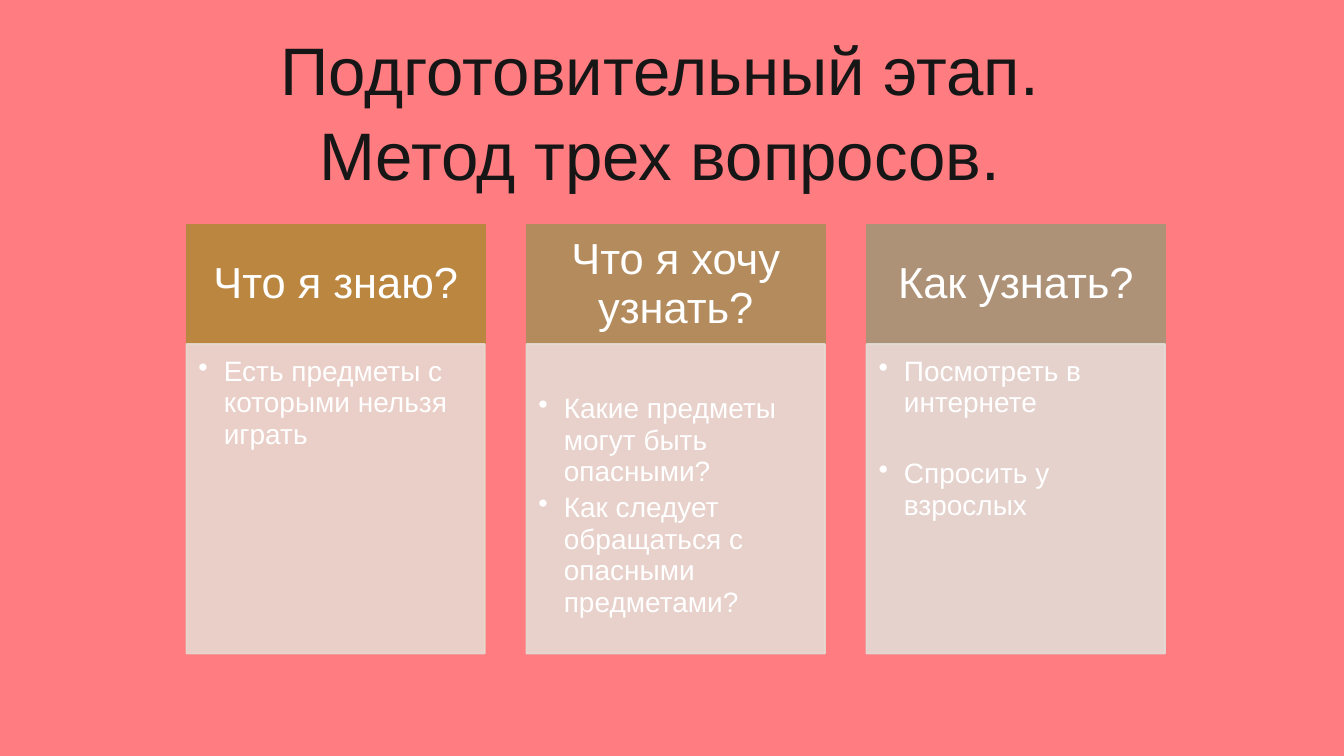
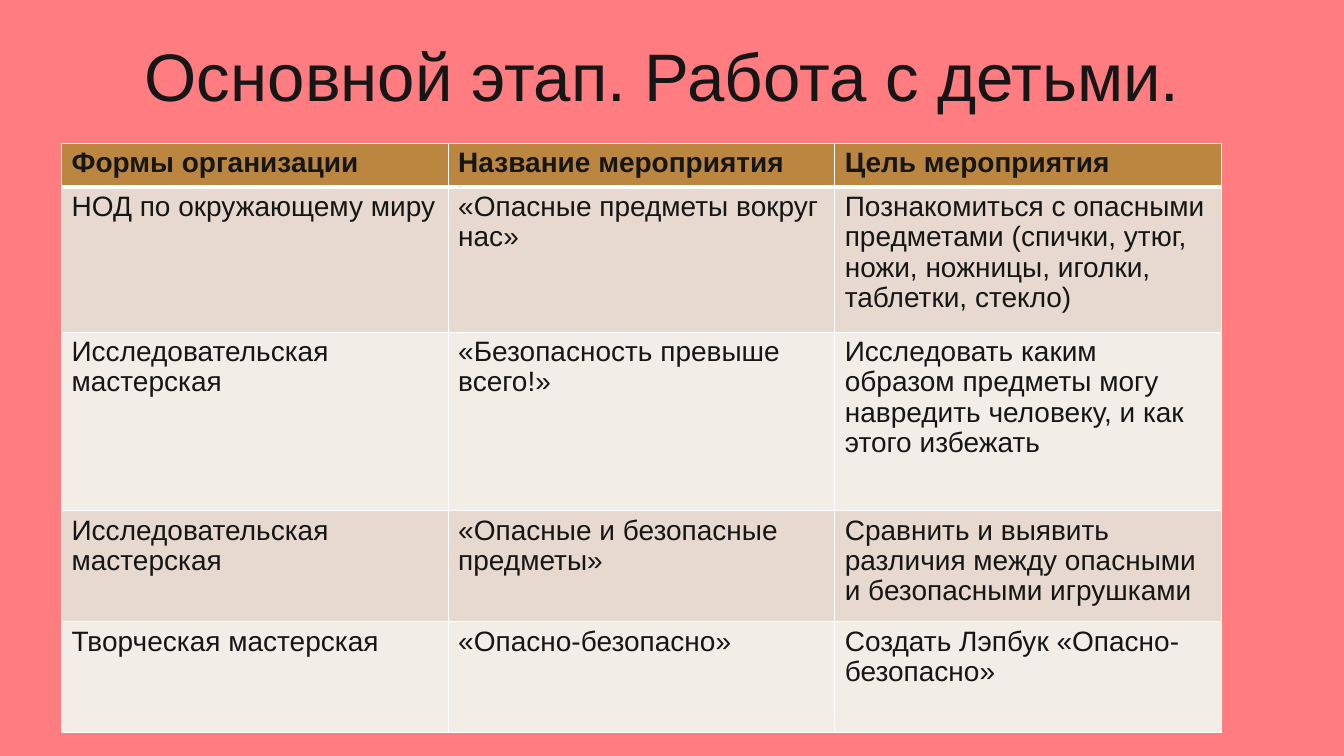
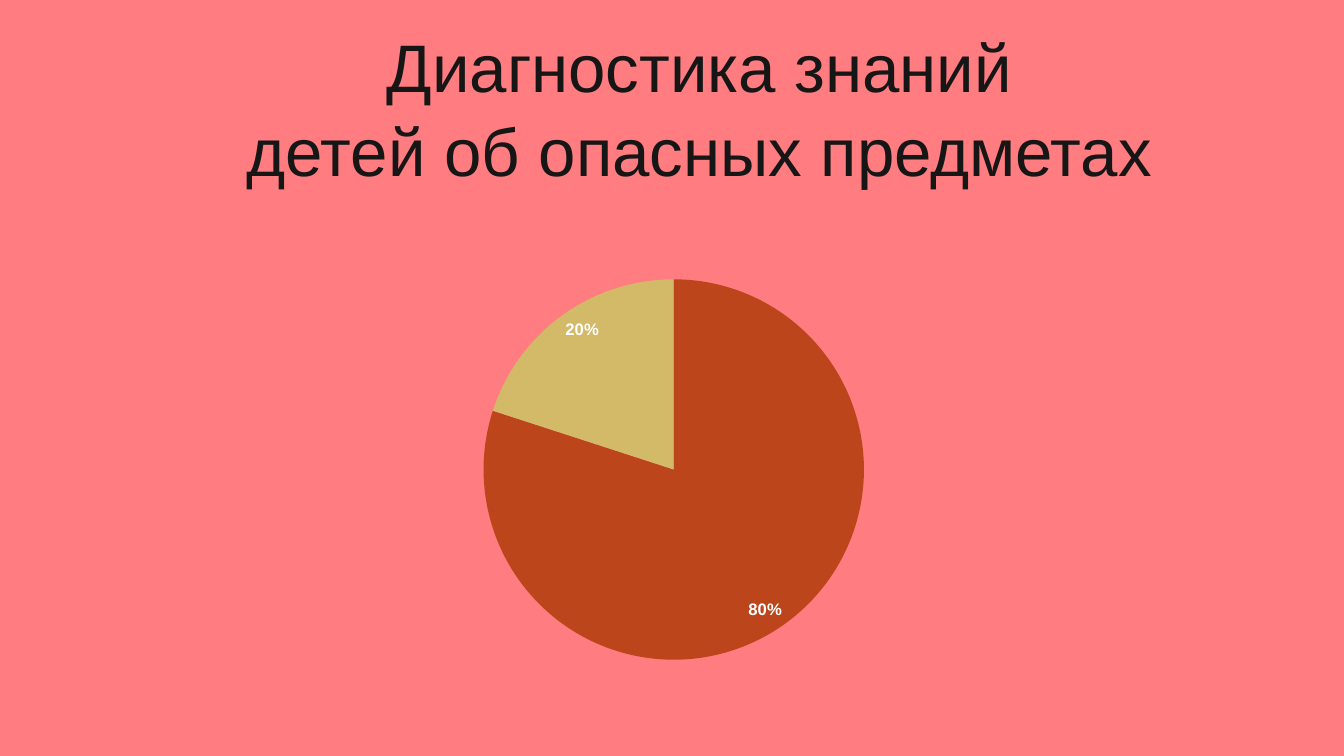
"""Build three slides on teaching children about dangerous objects."""
from lxml import etree
from pptx import Presentation
from pptx.chart.data import CategoryChartData
from pptx.dml.color import RGBColor
from pptx.enum.chart import XL_CHART_TYPE, XL_LABEL_POSITION
from pptx.enum.shapes import MSO_SHAPE
from pptx.enum.text import MSO_ANCHOR, PP_ALIGN
from pptx.oxml import parse_xml
from pptx.oxml.ns import nsdecls, qn
from pptx.util import Cm, Pt

CENTER = PP_ALIGN.CENTER
LEFT = PP_ALIGN.LEFT
TOP = MSO_ANCHOR.TOP
MIDDLE = MSO_ANCHOR.MIDDLE
RECTANGLE = MSO_SHAPE.RECTANGLE
PIE = XL_CHART_TYPE.PIE
INSIDE_END = XL_LABEL_POSITION.INSIDE_END

FONT = "Arial"
CORAL = RGBColor(0xFF, 0x7C, 0x80)
INK = RGBColor(0x16, 0x16, 0x16)
WHITE = RGBColor(0xFF, 0xFF, 0xFF)
OCHRE = RGBColor(0xBB, 0x86, 0x40)
TAN = RGBColor(0xB4, 0x8B, 0x5C)
TAUPE = RGBColor(0xAD, 0x92, 0x77)
SAND = RGBColor(0xE7, 0xD9, 0xCF)
LINEN = RGBColor(0xE5, 0xDB, 0xD3)
MIST = RGBColor(0xE3, 0xDC, 0xD6)
CREAM = RGBColor(0xF3, 0xED, 0xE8)
RUST = RGBColor(0xBC, 0x45, 0x1B)
STRAW = RGBColor(0xD3, 0xBA, 0x68)

QUESTIONS = [
    ("Что я знаю?", OCHRE, SAND, 0.3, 3,
     ["Есть предметы с которыми нельзя играть"]),
    ("Что я хочу узнать?", TAN, LINEN, 1.24, 3,
     ["Какие предметы могут быть опасными?",
      "Как следует обращаться с опасными предметами?"]),
    ("Как узнать?", TAUPE, MIST, 0.3, 28,
     ["Посмотреть в интернете", "Спросить у взрослых"]),
]
ACTIVITIES = [
    ("Формы организации", "Название мероприятия", "Цель мероприятия"),
    ("НОД по окружающему миру", "«Опасные предметы вокруг нас»",
     "Познакомиться с опасными предметами (спички, утюг, ножи, ножницы, "
     "иголки, таблетки, стекло)"),
    ("Исследовательская мастерская", "«Безопасность превыше всего!»",
     "Исследовать каким образом предметы могу навредить человеку, "
     "и как этого избежать"),
    ("Исследовательская мастерская", "«Опасные и безопасные предметы»",
     "Сравнить и выявить различия между опасными и безопасными игрушками"),
    ("Творческая мастерская", "«Опасно-безопасно»",
     "Создать Лэпбук «Опасно-безопасно»"),
]
ROW_HEIGHTS = [1.1, 3.65, 4.5, 2.8, 2.8]


def add_page(deck):
    page = deck.slides.add_slide(deck.slide_layouts[6])
    page.background.fill.solid()
    page.background.fill.fore_color.rgb = CORAL
    return page


def set_frame(frame, insets, anchor=TOP):
    frame.word_wrap = True
    frame.vertical_anchor = anchor
    (frame.margin_left, frame.margin_top,
     frame.margin_right, frame.margin_bottom) = map(Cm, insets)


def write(frame, lines, size, color, align=LEFT, spacing=1.0, gap=0,
          bold=False, bullet=False):
    for index, line in enumerate(lines):
        para = frame.add_paragraph() if index else frame.paragraphs[0]
        if bullet:
            properties = para._p.get_or_add_pPr()
            properties.set("marL", str(Cm(0.64)))
            properties.set("indent", str(-Cm(0.64)))
            etree.SubElement(properties, qn("a:buChar")).set("char", "•")
        para.alignment = align
        para.line_spacing = spacing
        para.space_before = Pt(0)
        para.space_after = Pt(gap)
        span = para.add_run()
        span.text = line
        span.font.name = FONT
        span.font.size = Pt(size)
        span.font.bold = bold
        span.font.color.rgb = color


def add_title(page, left, top, width, lines, align=CENTER):
    height = 0.25 + 2.06 * len(lines)
    box = page.shapes.add_textbox(Cm(left), Cm(top), Cm(width), Cm(height))
    set_frame(box.text_frame, (0.25, 0.2, 0.25, 0.05))
    write(box.text_frame, lines, 48, INK, align, spacing=1.05)


def add_block(page, left, top, width, height, color, opacity=100):
    block = page.shapes.add_shape(RECTANGLE, Cm(left), Cm(top), Cm(width), Cm(height))
    block.shadow.inherit = False
    block.fill.solid()
    block.fill.fore_color.rgb = color
    block.line.color.rgb = color
    block.line.width = Pt(1.25)
    if opacity < 100:
        for tint in block._element.spPr.iter(qn("a:srgbClr")):
            etree.SubElement(tint, qn("a:alpha")).set("val", str(opacity * 1000))
    return block.text_frame


def add_question(page, left, question):
    heading, color, pale, top_inset, gap, answers = question
    header = add_block(page, left, 5.66, 7.52, 3.01, color)
    set_frame(header, (0.6, 0.35, 0.6, 0.35), MIDDLE)
    write(header, [heading], 31, WHITE, CENTER, spacing=0.94)
    panel = add_block(page, left, 8.67, 7.52, 7.8, pale, 90)
    set_frame(panel, (0.3, top_inset, 0.4, 0.42))
    write(panel, answers, 20, WHITE, spacing=0.94, gap=gap, bullet=True)


def set_borders(cell, widths):
    properties = cell._tc.get_or_add_tcPr()
    for side, width in zip("LRTB", widths):
        properties.append(parse_xml(
            f'<a:ln{side} {nsdecls("a")} w="{Pt(width)}"><a:solidFill>'
            f'<a:srgbClr val="{WHITE}"/></a:solidFill></a:ln{side}>'))


def add_activities(page):
    frame = page.shapes.add_table(len(ACTIVITIES), 3, Cm(1.55), Cm(3.62),
                                  Cm(29.23), Cm(sum(ROW_HEIGHTS)))
    table = frame.table
    for row_index, texts in enumerate(ACTIVITIES):
        table.rows[row_index].height = Cm(ROW_HEIGHTS[row_index])
        is_header = row_index == 0
        color = OCHRE if is_header else (CREAM, SAND)[row_index % 2]
        widths = (1, 1, 3 if row_index == 1 else 1, 3 if is_header else 1)
        for column_index, text in enumerate(texts):
            cell = table.cell(row_index, column_index)
            set_borders(cell, widths)
            cell.fill.solid()
            cell.fill.fore_color.rgb = color
            write(cell.text_frame, [text], 20, INK, spacing=0.97, bold=is_header)


def add_pie(page):
    data = CategoryChartData()
    data.categories = ["1", "2"]
    data.add_series("Series 1", (80, 20))
    chart = page.shapes.add_chart(PIE, Cm(9.88), Cm(6.73), Cm(14.2), Cm(10.31), data).chart
    chart.has_title = False
    chart.has_legend = False
    chart.font.name = FONT
    chart.font.size = Pt(10)
    chart.font.color.rgb = WHITE
    area = chart._chartSpace.chart.plotArea
    for old in area.findall(qn("c:layout")):
        area.remove(old)
    area.insert(0, parse_xml(
        f'<c:layout {nsdecls("c")}><c:manualLayout><c:layoutTarget val="inner"/>'
        '<c:xMode val="edge"/><c:yMode val="edge"/><c:x val="0.16"/>'
        '<c:y val="0.03"/><c:w val="0.68"/><c:h val="0.93"/>'
        '</c:manualLayout></c:layout>'))
    plot = chart.plots[0]
    plot.vary_by_categories = True
    for index, color in enumerate((RUST, STRAW)):
        point = plot.series[0].points[index]
        point.format.fill.solid()
        point.format.fill.fore_color.rgb = color
        point.format.line.fill.background()
    labels = plot.series[0].data_labels
    labels.show_value = False
    labels.show_percentage = True
    labels.number_format = "0%"
    labels.number_format_is_linked = False
    labels.position = INSIDE_END
    labels.font.name = FONT
    labels.font.size = Pt(11.9)
    labels.font.bold = True
    labels.font.color.rgb = WHITE


def main():
    deck = Presentation()
    deck.slide_width, deck.slide_height = Cm(33.87), Cm(19.05)

    page = add_page(deck)
    add_title(page, 6.22, 0.41, 20.83, ["Подготовительный этап.", "Метод трех вопросов."])
    for index, question in enumerate(QUESTIONS):
        add_question(page, 4.7 + 8.57 * index, question)

    page = add_page(deck)
    add_title(page, 3.4, 0.56, 28.85, ["Основной этап. Работа с детьми."], LEFT)
    add_activities(page)

    page = add_page(deck)
    add_title(page, 2.54, 0.33, 30.18, ["Диагностика знаний", "детей об опасных предметах"])
    add_pie(page)

    deck.save("out.pptx")


if __name__ == "__main__":
    main()
